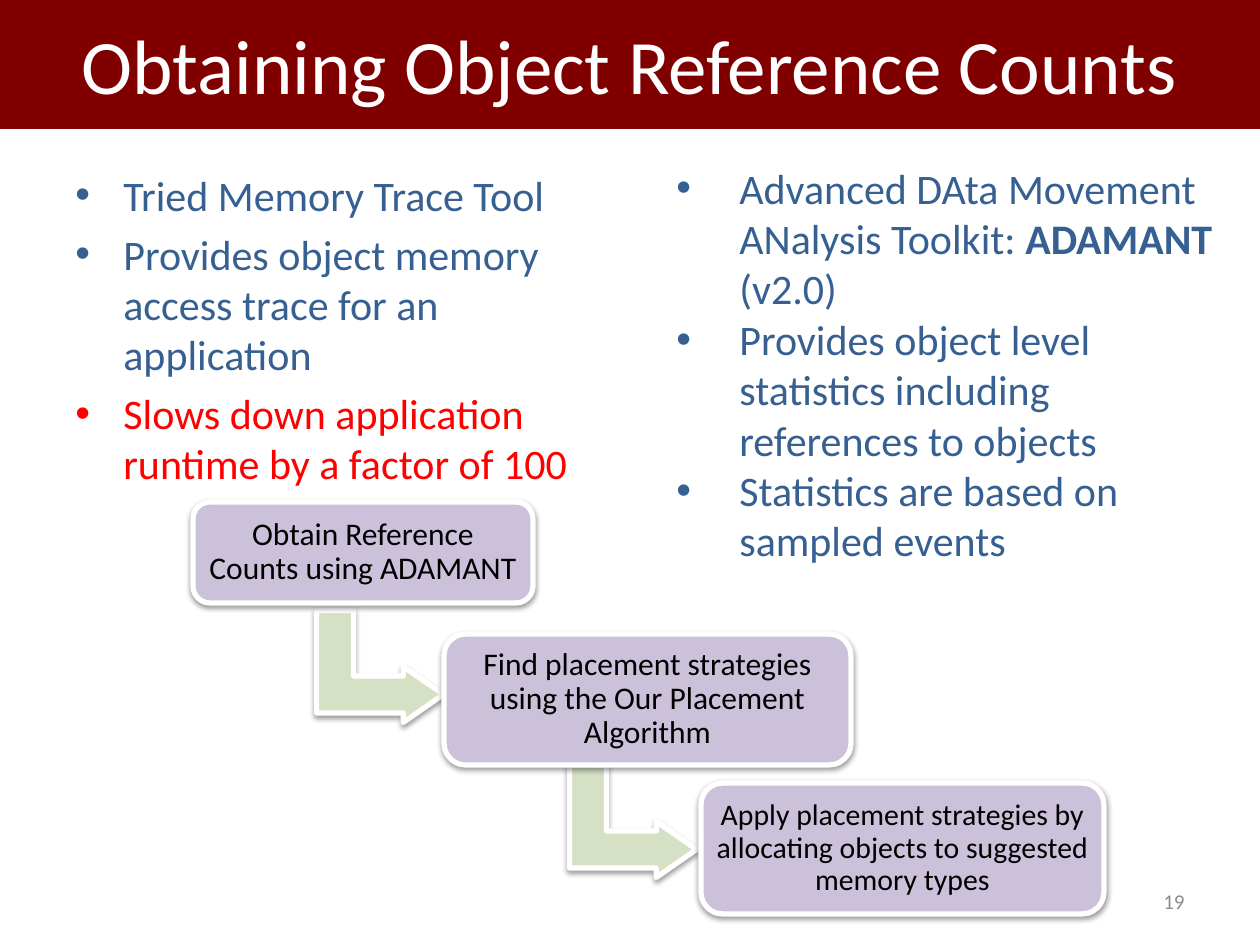
from lxml import etree
from pptx import Presentation
from pptx import util as u
from pptx.dml.color import RGBColor
from pptx.enum import shapes, text
from pptx.oxml.ns import qn

SCALE = u.Inches(1) / 126
FONT = "Calibri"
MAROON = RGBColor(0x80, 0x00, 0x00)
WHITE = RGBColor(0xFF, 0xFF, 0xFF)
BLACK = RGBColor(0x00, 0x00, 0x00)
BLUE = RGBColor(0x37, 0x60, 0x92)
RED = RGBColor(0xFF, 0x00, 0x00)
GRAY = RGBColor(0x8C, 0x8C, 0x8C)
LILAC = RGBColor(0xCC, 0xC1, 0xDA)
SAGE = RGBColor(0xD5, 0xE0, 0xC4)

LEFT_POINTS = [
    (["Tried Memory Trace Tool"], BLUE),
    (["Provides object memory access trace for an application"], BLUE),
    (["Slows down application runtime by a factor of 100"], RED),
]
RIGHT_POINTS = [
    (["Advanced DAta Movement ANalysis Toolkit: ", "ADAMANT", " (v2.0)"], BLUE),
    (["Provides object level statistics including references to objects"], BLUE),
    (["Statistics are based on sampled events"], BLUE),
]
STEPS = [
    ("Obtain Reference Counts using ADAMANT", 18, (0, 0, 340, 101)),
    ("Find placement strategies using the Our Placement Algorithm", 18,
     (251, 132, 407, 131)),
    ("Apply placement strategies by allocating objects to suggested memory types",
     17, (508, 281, 403, 131)),
]
ARROWS = [(131, 101), (384, 256)]


def px(value):
    return u.Emu(round(value * SCALE))


def place(box):
    return [px(value) for value in box]


def style(para, size, color, align):
    para.alignment = align
    para.font.name = FONT
    para.font.size = u.Pt(size)
    para.font.color.rgb = color


def add_plate(page, kind, box, fill):
    plate = page.shapes.add_shape(kind, *place(box))
    plate.shadow.inherit = False
    plate.fill.solid()
    plate.fill.fore_color.rgb = fill
    plate.line.fill.background()
    return plate


def raise_plate(plate):
    plate.line.color.rgb = WHITE
    plate.line.width = u.Pt(3)
    effects = plate.element.spPr.find(qn("a:effectLst"))
    shadow = etree.SubElement(effects, qn("a:outerShdw"), blurRad="40000",
                              dist="20000", dir="5400000", rotWithShape="0")
    color = etree.SubElement(shadow, qn("a:srgbClr"), val=str(BLACK))
    etree.SubElement(color, qn("a:alpha"), val="38000")


def add_title(page, box, words):
    frame = add_plate(page, shapes.MSO_SHAPE.RECTANGLE, box, MAROON).text_frame
    frame.word_wrap = True
    frame.vertical_anchor = text.MSO_ANCHOR.MIDDLE
    frame.text = words
    style(frame.paragraphs[0], 44, WHITE, text.PP_ALIGN.CENTER)


def add_bullets(page, box, points, indent, gap):
    frame = page.shapes.add_textbox(*place(box)).text_frame
    frame.word_wrap = True
    for index, (parts, color) in enumerate(points):
        para = frame.add_paragraph() if index else frame.paragraphs[0]
        for part in parts:
            span = para.add_run()
            span.text = part
            if part == "ADAMANT":
                span.font.bold = True
        props = para._p.get_or_add_pPr()
        props.set("marL", str(px(indent)))
        props.set("indent", str(-px(indent)))
        etree.SubElement(props, qn("a:buFont"), typeface="Arial")
        etree.SubElement(props, qn("a:buChar"), char="•")
        para.space_before = u.Pt(gap)
        style(para, 24, color, text.PP_ALIGN.LEFT)


def add_step(page, box, words, size):
    plate = add_plate(page, shapes.MSO_SHAPE.ROUNDED_RECTANGLE, box, LILAC)
    raise_plate(plate)
    frame = plate.text_frame
    frame.word_wrap = True
    frame.vertical_anchor = text.MSO_ANCHOR.MIDDLE
    frame.margin_left = frame.margin_right = px(9)
    frame.margin_top = frame.margin_bottom = px(9)
    frame.text = words
    para = frame.paragraphs[0]
    para.line_spacing = 0.9
    style(para, size, BLACK, text.PP_ALIGN.CENTER)


def add_arrow(page, box):
    arrow = add_plate(page, shapes.MSO_SHAPE.BENT_UP_ARROW, box, SAGE)
    for index, value in enumerate((0.33, 0.25, 0.36)):
        arrow.adjustments[index] = value
    arrow.rotation = 90
    raise_plate(arrow)


def add_flow(page, left, top):
    for across, down in ARROWS:
        add_arrow(page, (left + across, top + down, 112, 127))
    for words, size, (across, down, width, height) in STEPS:
        add_step(page, (left + across, top + down, width, height), words, size)


def add_page_number(page, box, number):
    frame = page.shapes.add_textbox(*place(box)).text_frame
    frame.word_wrap = True
    frame.vertical_anchor = text.MSO_ANCHOR.MIDDLE
    frame.text = number
    style(frame.paragraphs[0], 12, GRAY, text.PP_ALIGN.RIGHT)


def main():
    deck = Presentation()
    deck.slide_width, deck.slide_height = px(1260), px(945)
    page = deck.slides.add_slide(deck.slide_layouts[6])
    add_title(page, (0, -1, 1260, 130), "Obtaining Object Reference Counts")
    add_bullets(page, (63, 163, 581, 344), LEFT_POINTS, 48, 4.8)
    add_page_number(page, (903, 876, 294, 50), "19")
    add_bullets(page, (664, 156, 562, 454), RIGHT_POINTS, 63, 0)
    add_flow(page, 193, 502)
    deck.save("out.pptx")


if __name__ == "__main__":
    main()
